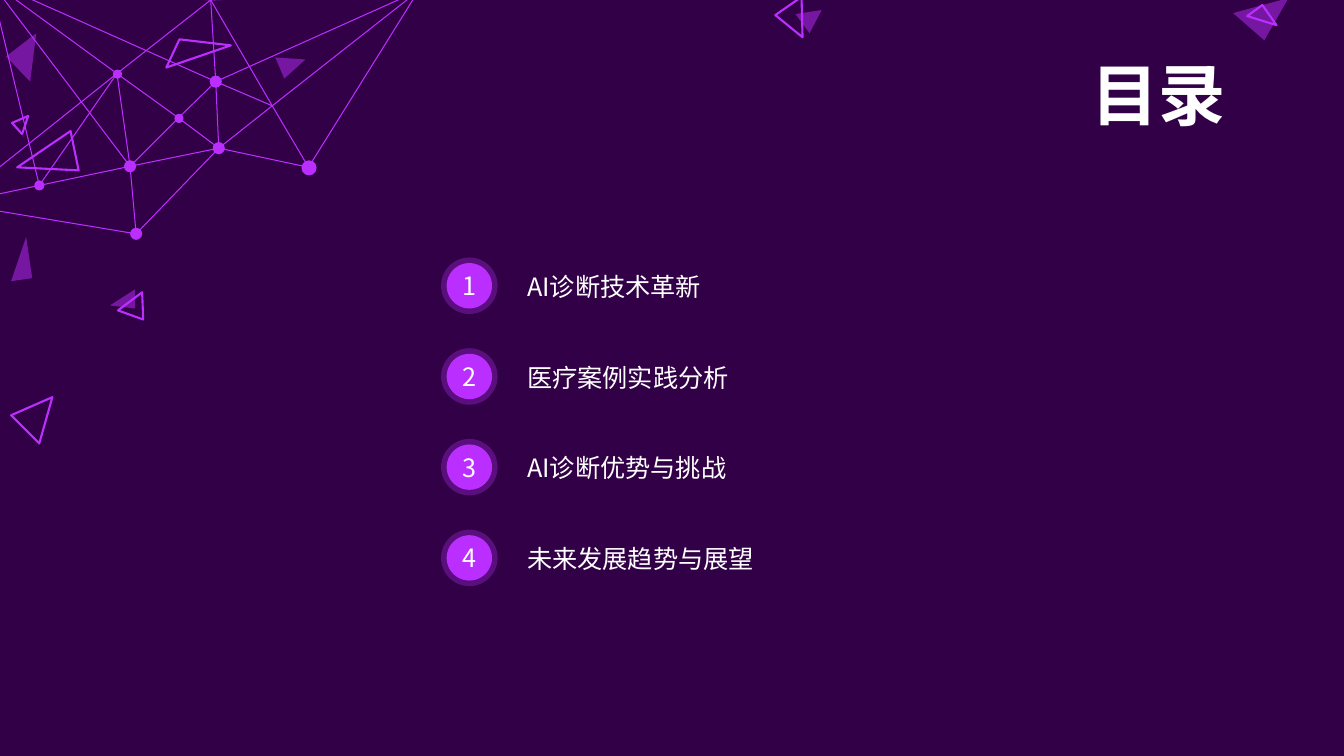
from lxml import etree
from pptx import Presentation
from pptx.dml.color import RGBColor
from pptx.enum.shapes import MSO_SHAPE
from pptx.enum.text import MSO_ANCHOR, PP_ALIGN
from pptx.oxml.ns import qn
from pptx.util import Pt

PX = 9144  # EMU per px, 100 px to the inch
OVAL = MSO_SHAPE.OVAL
TOP, MIDDLE = MSO_ANCHOR.TOP, MSO_ANCHOR.MIDDLE
LEFT, CENTER = PP_ALIGN.LEFT, PP_ALIGN.CENTER
FONT = "Noto Sans CJK SC"
COLORS = {"night": "320046", "violet": "BA2FFF", "white": "FFFFFF"}

ENTRIES = ["AI诊断技术革新", "医疗案例实践分析", "AI诊断优势与挑战", "未来发展趋势与展望"]
ENTRY_TOP, ENTRY_STEP = 249, 90

OUTLINED_TRIANGLES = [
    [(17, 166), (70, 130), (78, 169)],
    [(52, 394), (39, 440), (11, 412)],
    [(142, 317), (117, 308), (141, 290)],
    [(178, 39), (229, 45), (165, 67)],
    [(769, 15), (795, -3), (796, 37)],
    [(22, 133), (12, 122), (28, 115)],
    [(1266, 25), (1237, 16), (1252, 5)],
]
SHADED_TRIANGLES = [
    [(30, 81), (36, 33), (6, 56)],
    [(26, 235), (32, 276), (11, 279)],
    [(134, 287), (134, 306), (109, 303)],
    [(1278, -2), (1223, 13), (1254, 40)],
    [(303, 59), (273, 57), (282, 78)],
    [(815, 10), (803, 33), (789, 14)],
]

NODES = {
    "a": (116, 73), "b": (214, 81), "c": (177, 117), "d": (129, 165),
    "e": (217, 147), "f": (306, 166), "g": (135, 232), "h": (39, 184),
    "k": (270, 105), "top": (209, 0), "corner": (-10, -19),
    "right": (415, -9), "left": (-46, 202),
}
STRANDS = [
    "corner top right f", "right k e", "right b", "top k f", "top b e",
    "top a left", "b k", "b c d", "a c e", "a d", "a h", "corner a",
    "corner b", "corner d", "corner h", "left h d e f", "left g", "d g", "e g",
]
DOT_SIZES = {"e": 12, "c": 9, "d": 12, "f": 15, "g": 12, "b": 12, "h": 10, "a": 9}


def color(name):
    return RGBColor.from_string(COLORS[name])


def set_opacity(paint, percent):
    """Make the solid colour of a fill or line element translucent."""
    tone = next(paint.iter(qn("a:srgbClr")))
    etree.SubElement(tone, qn("a:alpha"), val=str(percent * 1000))


def paint_fill(shape, opacity=100):
    shape.shadow.inherit = False
    shape.fill.solid()
    shape.fill.fore_color.rgb = color("violet")
    shape.line.fill.background()
    if opacity < 100:
        set_opacity(shape._element.spPr.find(qn("a:solidFill")), opacity)


def paint_outline(shape, width):
    shape.shadow.inherit = False
    shape.fill.background()
    shape.line.color.rgb = color("violet")
    shape.line.width = Pt(width)


def add_outline(shapes, contours, close):
    """Add one freeform holding all the contours."""
    builder = shapes.build_freeform(*contours[0][0], scale=PX)
    builder.add_line_segments(contours[0][1:], close=close)
    for contour in contours[1:]:
        builder.move_to(*contour[0])
        builder.add_line_segments(contour[1:], close=close)
    return builder.convert_to_shape()


def add_oval(shapes, left, top, size):
    oval = shapes.add_shape(OVAL, left * PX, top * PX, size * PX, size * PX)
    paint_fill(oval)
    return oval


def write(box, text, size, align, anchor, bold=False):
    frame = box.text_frame
    frame.word_wrap = True
    frame.vertical_anchor = anchor
    para = frame.paragraphs[0]
    para.alignment = align
    span = para.add_run()
    span.text = text
    font = span.font
    font.name, font.size, font.bold = FONT, Pt(size), bold
    font.color.rgb = color("white")
    etree.SubElement(span._r.get_or_add_rPr(), qn("a:ea"), typeface=FONT)


def add_text(shapes, left, top, width, height, *text_style, **options):
    box = shapes.add_textbox(left * PX, top * PX, width * PX, height * PX)
    write(box, *text_style, **options)


def add_triangles(page):
    outlined = page.shapes.add_group_shape().shapes
    for corners in OUTLINED_TRIANGLES:
        paint_outline(add_outline(outlined, [corners], close=True), 1.5)
    shaded = page.shapes.add_group_shape().shapes
    for corners in SHADED_TRIANGLES:
        paint_fill(add_outline(shaded, [corners], close=True), opacity=50)


def add_network(page):
    shapes = page.shapes.add_group_shape().shapes
    contours = [[NODES[name] for name in strand.split()] for strand in STRANDS]
    paint_outline(add_outline(shapes, contours, close=False), 0.75)
    for name, size in DOT_SIZES.items():
        x, y = NODES[name]
        add_oval(shapes, x - size // 2, y - size // 2, size)


def add_entry(page, number, title):
    top = ENTRY_TOP + (number - 1) * ENTRY_STEP
    shapes = page.shapes.add_group_shape().shapes
    badge = add_oval(shapes, 443, top + 12, 45)
    badge.line.color.rgb = color("violet")
    badge.line.width = Pt(8)
    set_opacity(badge.line._ln, 30)
    frame = badge.text_frame
    frame.margin_left = frame.margin_right = 0
    frame.margin_top = frame.margin_bottom = 0
    write(badge, str(number), 18, CENTER, MIDDLE)
    add_text(shapes, 513, top, 622, 70, title, 18, LEFT, MIDDLE)


def main():
    deck = Presentation()
    deck.slide_width, deck.slide_height = 1333 * PX, 750 * PX
    page = deck.slides.add_slide(deck.slide_layouts[6])
    page.background.fill.solid()
    page.background.fill.fore_color.rgb = color("night")
    add_triangles(page)
    add_network(page)
    add_text(page.shapes, 1062, 48, 174, 109, "目录", 48, CENTER, TOP, bold=True)
    for number, title in enumerate(ENTRIES, start=1):
        add_entry(page, number, title)
    deck.save("out.pptx")


if __name__ == "__main__":
    main()
